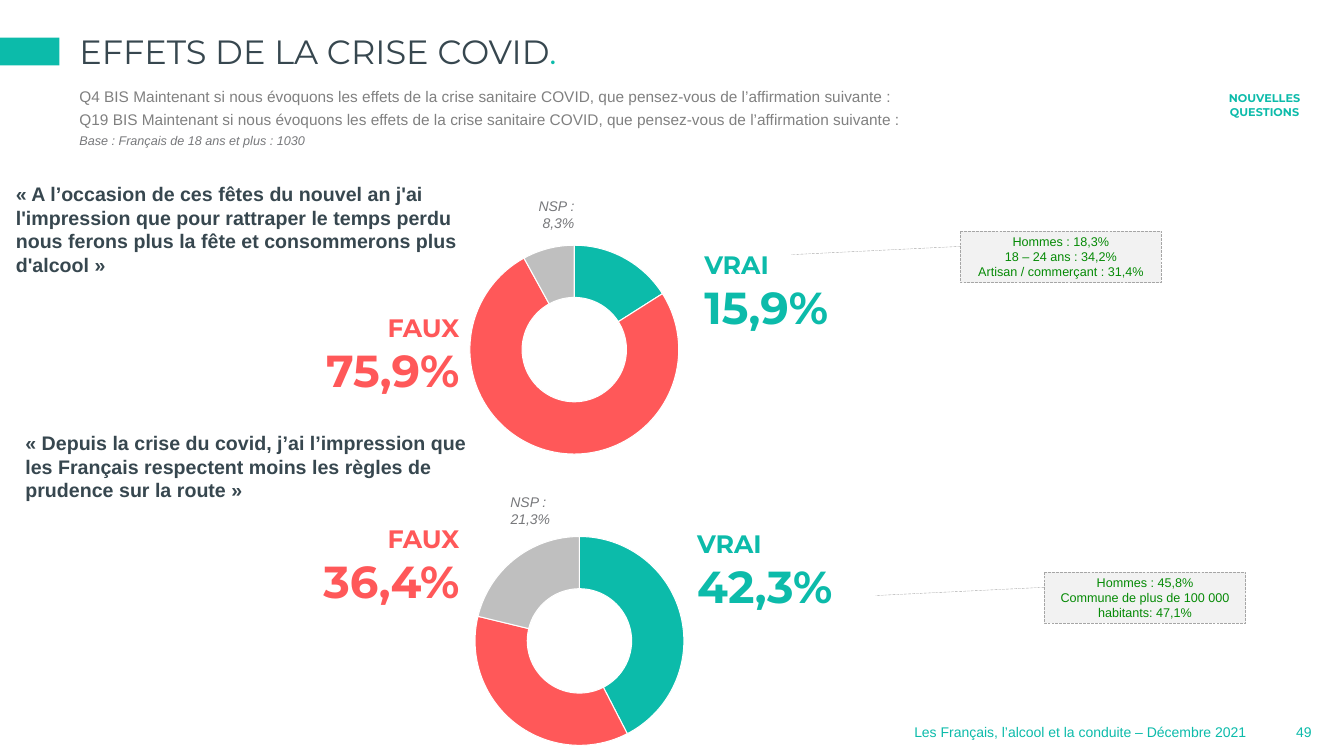
from dataclasses import dataclass

from lxml import etree
from pptx import Presentation
from pptx.chart.data import CategoryChartData
from pptx.dml.color import RGBColor
from pptx.enum.chart import XL_CHART_TYPE
from pptx.enum.dml import MSO_LINE
from pptx.enum.shapes import MSO_SHAPE
from pptx.enum.text import MSO_ANCHOR, MSO_AUTO_SIZE, PP_ALIGN
from pptx.oxml.ns import qn
from pptx.util import Cm, Pt

LEFT, CENTER, RIGHT = PP_ALIGN.LEFT, PP_ALIGN.CENTER, PP_ALIGN.RIGHT
TOP, MIDDLE = MSO_ANCHOR.TOP, MSO_ANCHOR.MIDDLE
DOUGHNUT = XL_CHART_TYPE.DOUGHNUT
RECTANGLE, CALLOUT = MSO_SHAPE.RECTANGLE, MSO_SHAPE.LINE_CALLOUT_1


@dataclass(frozen=True)
class Theme:
    teal: str = "0CBBAA"
    red: str = "FF5859"
    silver: str = "BFBFBF"
    slate: str = "37474F"
    question: str = "808080"
    note: str = "77787B"
    callout_text: str = "058A05"
    callout_fill: str = "F2F2F2"
    callout_line: str = "A6A6A6"
    white: str = "FFFFFF"
    body_font: str = "Arial"
    display_font: str = "Montserrat"
    title_size: float = 24
    figure_size: float = 32
    answer_size: float = 18
    quote_size: float = 14
    question_size: float = 11
    note_size: float = 10
    base_size: float = 9
    tag_size: float = 8


THEME = Theme()

TITLE = ("EFFETS DE LA CRISE COVID", ".")
QUESTIONS = [
    "Q4 BIS Maintenant si nous évoquons les effets de la crise sanitaire COVID, que pensez-vous de l’affirmation suivante :",
    "Q19 BIS Maintenant si nous évoquons les effets de la crise sanitaire COVID, que pensez-vous de l’affirmation suivante :",
]
BASE = "Base : Français de 18 ans et plus : 1030"
TAG = ["NOUVELLES", "QUESTIONS"]
FOOTER = "Les Français, l’alcool et la conduite – Décembre 2021"
PAGE_NUMBER = "49"
ANSWERS = ["VRAI", "FAUX", "NSP"]

# Boxes are (left, top, width, height) in centimetres.
STATEMENTS = [
    {
        "quote": "« A l’occasion de ces fêtes du nouvel an j'ai l'impression que pour rattraper le temps perdu nous ferons plus la fête et consommerons plus d'alcool »",
        "shares": [16, 76, 8],
        "labels": ["15,9%", "75,9%", "8,3%"],
        "groups": ["Hommes : 18,3%", "18 – 24 ans : 34,2%", "Artisan / commerçant : 31,4%"],
        "quote_box": (0.15, 4.47, 12.07, 2.64),
        "chart_at": (8.5, 5.0),
        "true_at": (17.5, 6.17),
        "false_at": (7.44, 7.75),
        "unsure_at": (12.78, 4.85),
        "callout_at": (24.2, 5.82),
    },
    {
        "quote": "« Depuis la crise du covid, j’ai l’impression que les Français respectent moins les règles de prudence sur la route »",
        "shares": [42, 36, 21],
        "labels": ["42,3%", "36,4%", "21,3%"],
        "groups": ["Hommes : 45,8%", "Commune de plus de 100 000 habitants: 47,1%"],
        "quote_box": (0.39, 10.74, 11.86, 2.06),
        "chart_at": (8.63, 12.34),
        "true_at": (17.32, 13.2),
        "false_at": (7.44, 13.06),
        "unsure_at": (12.07, 12.32),
        "callout_at": (26.32, 14.41),
    },
]
CHART_SIZE = (11.38, 7.24)
TRUE_SIZE = (5.05, 2.39)
FALSE_SIZE = (4.39, 2.39)
UNSURE_SIZE = (2.59, 1.12)
CALLOUT_SIZE = (5.07, 1.3)
CALLOUT_POINTS = (0.3, 0, 0.46, -0.84)
PLOT_LAYOUT = {"layoutTarget": "inner", "xMode": "edge", "yMode": "edge",
               "x": 0.243, "y": 0.163, "w": 0.564, "h": 0.727}


def cm_box(values):
    return [Cm(value) for value in values]


def paint(fill, color):
    fill.solid()
    fill.fore_color.rgb = RGBColor.from_string(color)


def style(font, size, color, name=THEME.body_font, bold=False, italic=False):
    font.size, font.name = Pt(size), name
    font.bold, font.italic = bold, italic
    font.color.rgb = RGBColor.from_string(color)


def write(frame, lines, sizes, color, align=LEFT, **look):
    """Fill a frame with one paragraph per line; sizes pairs with lines."""
    frame.text = "\n".join(lines)
    for para, size in zip(frame.paragraphs, sizes):
        para.alignment = align
        for span in para.runs:
            style(span.font, size, color, **look)


def add_text(page, box, lines, sizes, color, wrap=True, **look):
    frame = page.shapes.add_textbox(*cm_box(box)).text_frame
    frame.word_wrap = wrap
    write(frame, lines, sizes, color, **look)


def place(holder, box):
    holder.left, holder.top, holder.width, holder.height = cm_box(box)
    frame = holder.text_frame
    frame.margin_left = frame.margin_top = frame.margin_right = frame.margin_bottom = 0
    frame.auto_size, frame.vertical_anchor = MSO_AUTO_SIZE.NONE, TOP
    return frame


def add_header(page):
    bar = page.shapes.add_shape(RECTANGLE, *cm_box((0, 0.95, 1.5, 0.7)))
    bar.shadow.inherit = False
    paint(bar.fill, THEME.teal)
    bar.line.fill.background()

    title = place(page.shapes.title, (2, 0.79, 30, 1.19))
    write(title, TITLE[:1], [THEME.title_size], THEME.slate, name=THEME.display_font)
    full_stop = title.paragraphs[0].add_run()
    full_stop.text = TITLE[1]
    style(full_stop.font, THEME.title_size, THEME.teal, name=THEME.display_font)

    body = place(page.placeholders[1], (2, 2.2, 30, 1.6))
    sizes = [THEME.question_size] * len(QUESTIONS) + [THEME.base_size]
    write(body, QUESTIONS + [BASE], sizes, THEME.question)
    for para in body.paragraphs:
        para.space_before, para.space_after = Pt(0), Pt(3)
        properties = para._p.get_or_add_pPr()
        properties.set("marL", "0")
        properties.set("indent", "0")
        etree.SubElement(properties, qn("a:buNone"))
    base = body.paragraphs[-1]
    base.level = 1
    style(base.runs[0].font, THEME.base_size, THEME.note, italic=True)

    add_text(page, (30.45, 2.18, 2.84, 0.94), TAG, [THEME.tag_size] * 2, THEME.teal,
             align=CENTER, name=THEME.display_font, bold=True)


def add_doughnut(page, box, shares):
    data = CategoryChartData()
    data.categories = ANSWERS
    data.add_series("Series 1", shares)
    chart = page.shapes.add_chart(DOUGHNUT, *cm_box(box), data).chart
    chart.has_legend = chart.has_title = False
    chart.font.size, chart.font.name = Pt(THEME.answer_size), THEME.body_font
    plot = chart.plots[0]
    plot.has_data_labels = False
    plot.vary_by_categories = True
    for index, color in enumerate((THEME.teal, THEME.red, THEME.silver)):
        slice_format = plot.series[0].points[index].format
        paint(slice_format.fill, color)
        paint(slice_format.line.fill, THEME.white)
        slice_format.line.width = Pt(0.75)

    area = chart._chartSpace.chart.plotArea
    for old_layout in area.findall(qn("c:layout")):
        area.remove(old_layout)
    layout = etree.Element(qn("c:layout"))
    manual = etree.SubElement(layout, qn("c:manualLayout"))
    for key, value in PLOT_LAYOUT.items():
        etree.SubElement(manual, qn(f"c:{key}")).set("val", str(value))
    area.insert(0, layout)


def add_callout(page, box, lines):
    callout = page.shapes.add_shape(CALLOUT, *cm_box(box))
    callout.shadow.inherit = False
    for index, value in enumerate(CALLOUT_POINTS):
        callout.adjustments[index] = value
    paint(callout.fill, THEME.callout_fill)
    paint(callout.line.fill, THEME.callout_line)
    callout.line.width, callout.line.dash_style = Pt(0.25), MSO_LINE.LONG_DASH
    callout.text_frame.vertical_anchor = MIDDLE
    write(callout.text_frame, lines, [THEME.base_size] * len(lines),
          THEME.callout_text, align=CENTER)


def add_statement(page, item):
    true_label, false_label, unsure_label = item["labels"]
    add_text(page, item["quote_box"], [item["quote"]], [THEME.quote_size], THEME.slate, bold=True)
    add_doughnut(page, item["chart_at"] + CHART_SIZE, item["shares"])
    sizes = [THEME.answer_size, THEME.figure_size]
    look = {"name": THEME.display_font, "bold": True}
    add_text(page, item["true_at"] + TRUE_SIZE, [ANSWERS[0], true_label], sizes, THEME.teal, **look)
    add_text(page, item["false_at"] + FALSE_SIZE, [ANSWERS[1], false_label], sizes, THEME.red,
             align=RIGHT, **look)
    add_text(page, item["unsure_at"] + UNSURE_SIZE, [f"{ANSWERS[2]} : ", unsure_label],
             [THEME.note_size] * 2, THEME.note, align=CENTER, italic=True)
    add_callout(page, item["callout_at"] + CALLOUT_SIZE, item["groups"])


def main():
    deck = Presentation()
    deck.slide_width, deck.slide_height = Cm(33.87), Cm(19.05)
    page = deck.slides.add_slide(deck.slide_layouts[1])
    add_header(page)
    for item in STATEMENTS:
        add_statement(page, item)
    add_text(page, (22.71, 18.11, 8.94, 0.69), [FOOTER], [THEME.note_size], THEME.teal,
             wrap=False, align=RIGHT)
    add_text(page, (32.29, 18.11, 1.14, 0.69), [PAGE_NUMBER], [THEME.note_size], THEME.teal,
             wrap=False, align=CENTER)
    deck.save("out.pptx")


if __name__ == "__main__":
    main()
